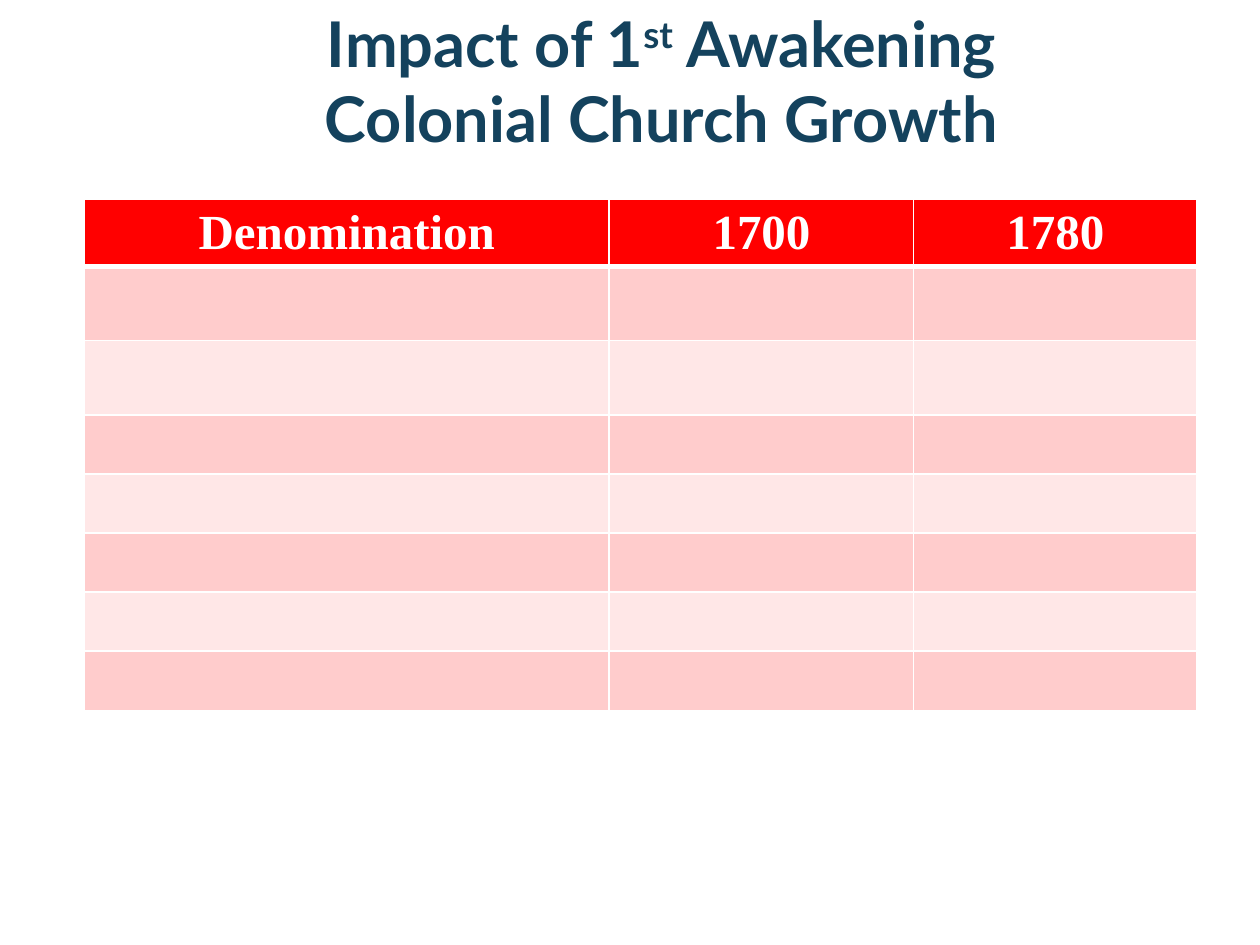
from dataclasses import dataclass

from lxml.etree import SubElement
from pptx import Presentation
from pptx.dml.color import RGBColor
from pptx.enum.text import MSO_ANCHOR, MSO_AUTO_SIZE, PP_ALIGN
from pptx.oxml.ns import qn
from pptx.util import Cm, Pt

WHITE, NAVY, RED = "FFFFFF", "14425D", "FF0000"
BAND_FILLS = ("FFCCCC", "FFE7E7")


@dataclass(frozen=True)
class TextStyle:
    font: str
    size: float
    color: str


@dataclass(frozen=True)
class Column:
    heading: str
    width: float


TITLE_STYLE = TextStyle("Lato", 36, NAVY)
HEADING_STYLE = TextStyle("Times New Roman", 28, WHITE)
COLUMNS = (Column("Denomination", 10.58), Column("1700", 6.14), Column("1780", 5.71))
ROW_HEIGHTS = (1.34, 1.5, 1.5) + (1.19,) * 5


def rgb(color: str) -> RGBColor:
    return RGBColor.from_string(color)


def add_run(paragraph, text: str, style: TextStyle):
    run = paragraph.add_run()
    run.text = text
    run.font.name = style.font
    run.font.size = Pt(style.size)
    run.font.bold = True
    run.font.color.rgb = rgb(style.color)
    return run


def set_borders(cell, color: str, width: float, bottom_width: float) -> None:
    properties = cell._tc.get_or_add_tcPr()
    for side in "LRTB":
        points = bottom_width if side == "B" else width
        line = SubElement(properties, qn(f"a:ln{side}"), w=str(Pt(points)))
        fill = SubElement(line, qn("a:solidFill"))
        SubElement(fill, qn("a:srgbClr"), val=color)


def fill_cell(cell, color: str) -> None:
    cell.fill.solid()
    cell.fill.fore_color.rgb = rgb(color)


def add_title(slide) -> None:
    title = slide.shapes.title
    title.left, title.top = Cm(2.54), Cm(0.2)
    title.width, title.height = Cm(21.59), Cm(3.18)
    frame = title.text_frame
    frame.auto_size = MSO_AUTO_SIZE.NONE
    frame.word_wrap = True
    frame.vertical_anchor = MSO_ANCHOR.BOTTOM
    frame.margin_bottom = Cm(0.25)
    paragraph = frame.paragraphs[0]
    paragraph.alignment = PP_ALIGN.CENTER
    add_run(paragraph, "Impact of 1", TITLE_STYLE)
    ordinal = add_run(paragraph, "st", TITLE_STYLE)
    ordinal.font._element.set("baseline", "30000")
    add_run(paragraph, " Awakening", TITLE_STYLE)
    paragraph.add_line_break()
    add_run(paragraph, "Colonial Church Growth", TITLE_STYLE)


def add_growth_table(slide) -> None:
    width = sum(column.width for column in COLUMNS)
    table = slide.shapes.add_table(
        len(ROW_HEIGHTS), len(COLUMNS), Cm(1.7), Cm(4.02), Cm(width), Cm(sum(ROW_HEIGHTS))
    ).table
    for row, height in zip(table.rows, ROW_HEIGHTS):
        row.height = Cm(height)
    for index, column in enumerate(COLUMNS):
        table.columns[index].width = Cm(column.width)
        for row_index in range(len(ROW_HEIGHTS)):
            cell = table.cell(row_index, index)
            is_heading = row_index == 0
            set_borders(cell, WHITE, 1, 3 if is_heading else 1)
            fill_cell(cell, RED if is_heading else BAND_FILLS[(row_index - 1) % 2])
        paragraph = table.cell(0, index).text_frame.paragraphs[0]
        paragraph.alignment = PP_ALIGN.CENTER
        add_run(paragraph, column.heading, HEADING_STYLE)


def main() -> None:
    presentation = Presentation()
    presentation.slide_width, presentation.slide_height = Cm(25.4), Cm(19.05)
    slide = presentation.slides.add_slide(presentation.slide_layouts.get_by_name("Title Only"))
    add_title(slide)
    add_growth_table(slide)
    presentation.save("out.pptx")


if __name__ == "__main__":
    main()
